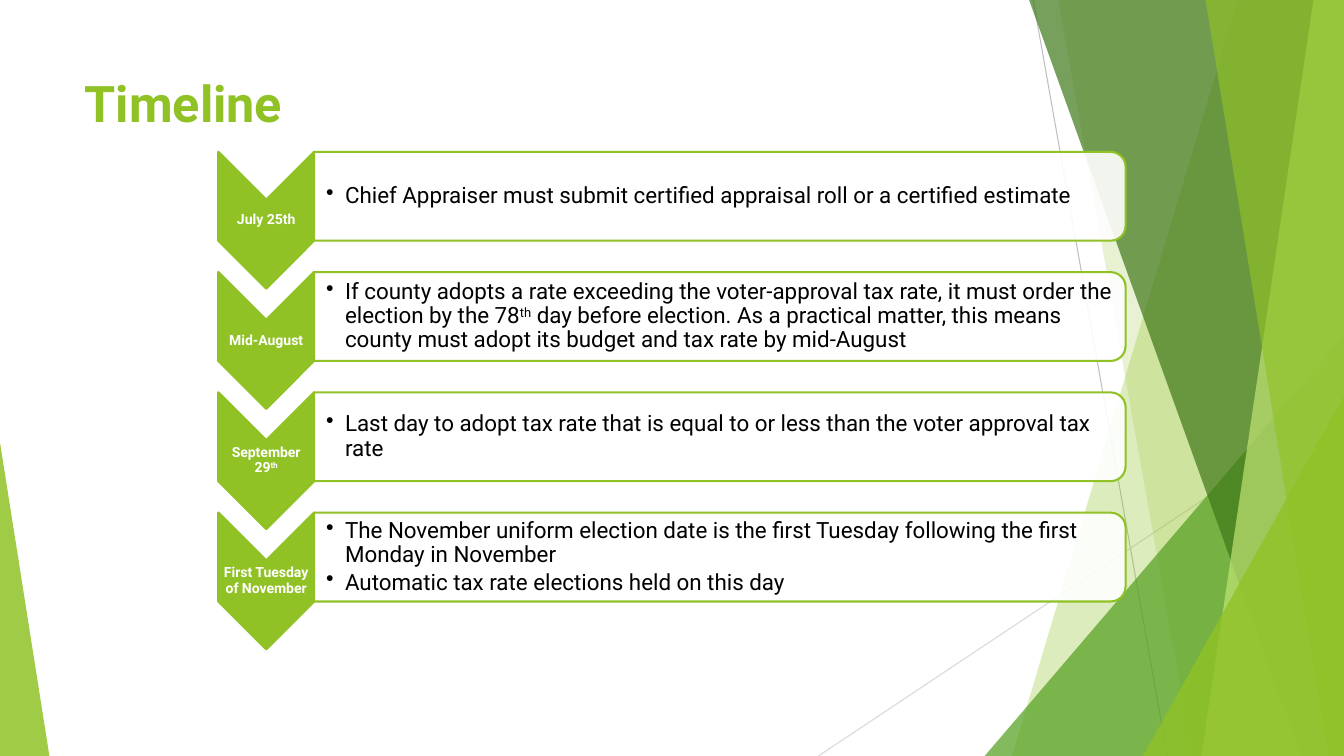
from lxml import etree
from pptx import Presentation
from pptx.dml.color import RGBColor
from pptx.enum.shapes import MSO_CONNECTOR, MSO_SHAPE
from pptx.enum.text import MSO_ANCHOR, PP_ALIGN
from pptx.oxml.ns import qn
from pptx.util import Pt

STRAIGHT = MSO_CONNECTOR.STRAIGHT
TRIANGLE, CHEVRON = MSO_SHAPE.ISOSCELES_TRIANGLE, MSO_SHAPE.CHEVRON
ROUND_TOP = MSO_SHAPE.ROUND_2_SAME_RECTANGLE
TOP, MIDDLE = MSO_ANCHOR.TOP, MSO_ANCHOR.MIDDLE
LEFT, CENTER = PP_ALIGN.LEFT, PP_ALIGN.CENTER

# Content: ^ marks the start and end of superscript
TITLE = "Timeline"
STEPS = [
    ("July 25th",
     ["Chief Appraiser must submit certified appraisal roll or a certified estimate"]),
    ("Mid-August",
     ["If county adopts a rate exceeding the voter-approval tax rate, it must order the "
      "election by the 78^th^ day before election. As a practical matter, this means "
      "county must adopt its budget and tax rate by mid-August"]),
    ("September 29^th^",
     ["Last day to adopt tax rate that is equal to or less than the voter approval tax rate"]),
    ("First Tuesday of November",
     ["The November uniform election date is the first Tuesday following the first "
      "Monday in November",
      "Automatic tax rate elections held on this day"]),
]

# Style and layout, in points
FONT, GREEN, WHITE, BLACK = "Roboto", "90C226", "FFFFFF", "000000"
WIDTH, HEIGHT = 960, 540
FIRST_CENTER, STEP_PITCH = 140.2, 85.9
CHEVRON_X, CHEVRON_WIDTH, CHEVRON_HEIGHT, CHEVRON_DROP = 190.1, 68.4, 97.8, 17.1
BOX_LEFT, BOX_WIDTH, BOX_HEIGHT = 224.4, 579.6, 63.4

# Background: lines (start, end, colour); facets (corners, colour, opacity);
# triangles (left, top, width, height, apex position, colour, opacity)
LINES = [((738, 0), (833.8, HEIGHT), "BFBFBF"),
         ((WIDTH, 290), (584.6, HEIGHT), "D9D9D9")]
BACK_FACETS = [(884.2, 722.9, GREEN, 30), (756, 851.8, GREEN, 20)]
BACK_TRIANGLE = (703.4, 239.8, 256.6, 300.2, 1, "54A021", 72)
FRONT_FACETS = [(735.1, 929.5, "3F7819", 70), (938.2, 858.2, "C0E474", 70),
                (861.1, 949, GREEN, 65)]
FRONT_TRIANGLES = [(816.5, 283, 143.5, 257, 1, GREEN, 80),
                   (0, 316.1, 35.3, 223.9, 0, GREEN, 85)]


def color(value):
    return RGBColor.from_string(value)


def paint(shape, fill, opacity=100, line=None):
    shape.shadow.inherit = False
    shape.fill.solid()
    shape.fill.fore_color.rgb = color(fill)
    if opacity < 100:
        fill_color = shape._element.spPr.find(qn("a:solidFill"))[0]
        etree.SubElement(fill_color, qn("a:alpha"), val=str(opacity * 1000))
    if line:
        shape.line.color.rgb = color(line)
        shape.line.width = Pt(1.5)
    else:
        shape.line.fill.background()


def add_line(slide, start, end, line_color):
    ends = [Pt(value) for value in (*start, *end)]
    connector = slide.shapes.add_connector(STRAIGHT, *ends)
    connector.line.color.rgb = color(line_color)
    connector.line.width = Pt(0.75)
    etree.SubElement(connector._element.spPr, qn("a:effectLst"))


def add_facet(slide, top_x, bottom_x, fill, opacity):
    builder = slide.shapes.build_freeform(Pt(top_x), 0)
    corners = [(WIDTH, 0), (WIDTH, HEIGHT), (bottom_x, HEIGHT)]
    builder.add_line_segments([(Pt(x), Pt(y)) for x, y in corners], close=True)
    paint(builder.convert_to_shape(), fill, opacity)


def add_triangle(slide, left, top, width, height, apex, fill, opacity):
    shape = slide.shapes.add_shape(TRIANGLE, Pt(left), Pt(top), Pt(width), Pt(height))
    shape.adjustments[0] = apex
    paint(shape, fill, opacity)


def add_turned(slide, preset, center_x, center_y, width, height):
    """Add a shape turned a quarter clockwise; the size is as seen on the slide."""
    shape = slide.shapes.add_shape(preset, Pt(center_x - height / 2), Pt(center_y - width / 2),
                                   Pt(height), Pt(width))
    shape.rotation = 90
    return shape


def format_paragraph(paragraph, text, size, text_color, bold=False, align=LEFT):
    paragraph.alignment = align
    font = paragraph.font
    font.name, font.size, font.bold = FONT, Pt(size), bold
    font.color.rgb = color(text_color)
    for index, part in enumerate(text.split("^")):
        if part:
            run = paragraph.add_run()
            run.text = part
            if index % 2:
                run._r.get_or_add_rPr().set("baseline", "30000")


def add_text(slide, left, center_y, width, height, inset, texts, size, text_color,
             bold=False, align=LEFT, space_after=0, bullets=False):
    box = slide.shapes.add_textbox(Pt(left), Pt(center_y - height / 2), Pt(width), Pt(height))
    frame = box.text_frame
    frame.word_wrap, frame.vertical_anchor = True, MIDDLE
    frame.margin_left = Pt(inset)
    frame.margin_top = frame.margin_right = frame.margin_bottom = Pt(0.7)
    for index, text in enumerate(texts):
        paragraph = frame.add_paragraph() if index else frame.paragraphs[0]
        paragraph.line_spacing = 0.9
        paragraph.space_after = Pt(space_after)
        if bullets:
            properties = paragraph._p.get_or_add_pPr()
            properties.set("marL", str(Pt(13.5)))
            properties.set("indent", str(-Pt(13.5)))
            etree.SubElement(properties, qn("a:buChar"), char="•")
        format_paragraph(paragraph, text, size, text_color, bold, align)


def add_step(slide, center_y, label, details):
    label_y = center_y + CHEVRON_DROP
    chevron = add_turned(slide, CHEVRON, CHEVRON_X, label_y, CHEVRON_WIDTH, CHEVRON_HEIGHT)
    paint(chevron, GREEN, line=GREEN)
    add_text(slide, CHEVRON_X - CHEVRON_WIDTH / 2, label_y, CHEVRON_WIDTH, 29.5, 0.7,
             [label], 10, WHITE, bold=True, align=CENTER, space_after=3.5)
    box = add_turned(slide, ROUND_TOP, BOX_LEFT + BOX_WIDTH / 2, center_y, BOX_WIDTH, BOX_HEIGHT)
    paint(box, WHITE, 90, GREEN)
    add_text(slide, BOX_LEFT, center_y, BOX_WIDTH - 3, 57.6, 8.6,
             details, 16, BLACK, space_after=2.4, bullets=True)


def main():
    presentation = Presentation()
    presentation.slide_width, presentation.slide_height = Pt(WIDTH), Pt(HEIGHT)
    slide = presentation.slides.add_slide(presentation.slide_layouts[5])

    # Background
    for line in LINES:
        add_line(slide, *line)
    for facet in BACK_FACETS:
        add_facet(slide, *facet)
    add_triangle(slide, *BACK_TRIANGLE)
    for facet in FRONT_FACETS:
        add_facet(slide, *facet)
    for triangle in FRONT_TRIANGLES:
        add_triangle(slide, *triangle)

    # Title
    title = slide.shapes.title
    title.left, title.top, title.width, title.height = Pt(53.3), Pt(48.2), Pt(676.8), Pt(103.7)
    title.text_frame.vertical_anchor = TOP
    format_paragraph(title.text_frame.paragraphs[0], TITLE, 36, GREEN, bold=True)

    # Timeline
    for index, (label, details) in enumerate(STEPS):
        add_step(slide, FIRST_CENTER + index * STEP_PITCH, label, details)

    presentation.save("out.pptx")


if __name__ == "__main__":
    main()
